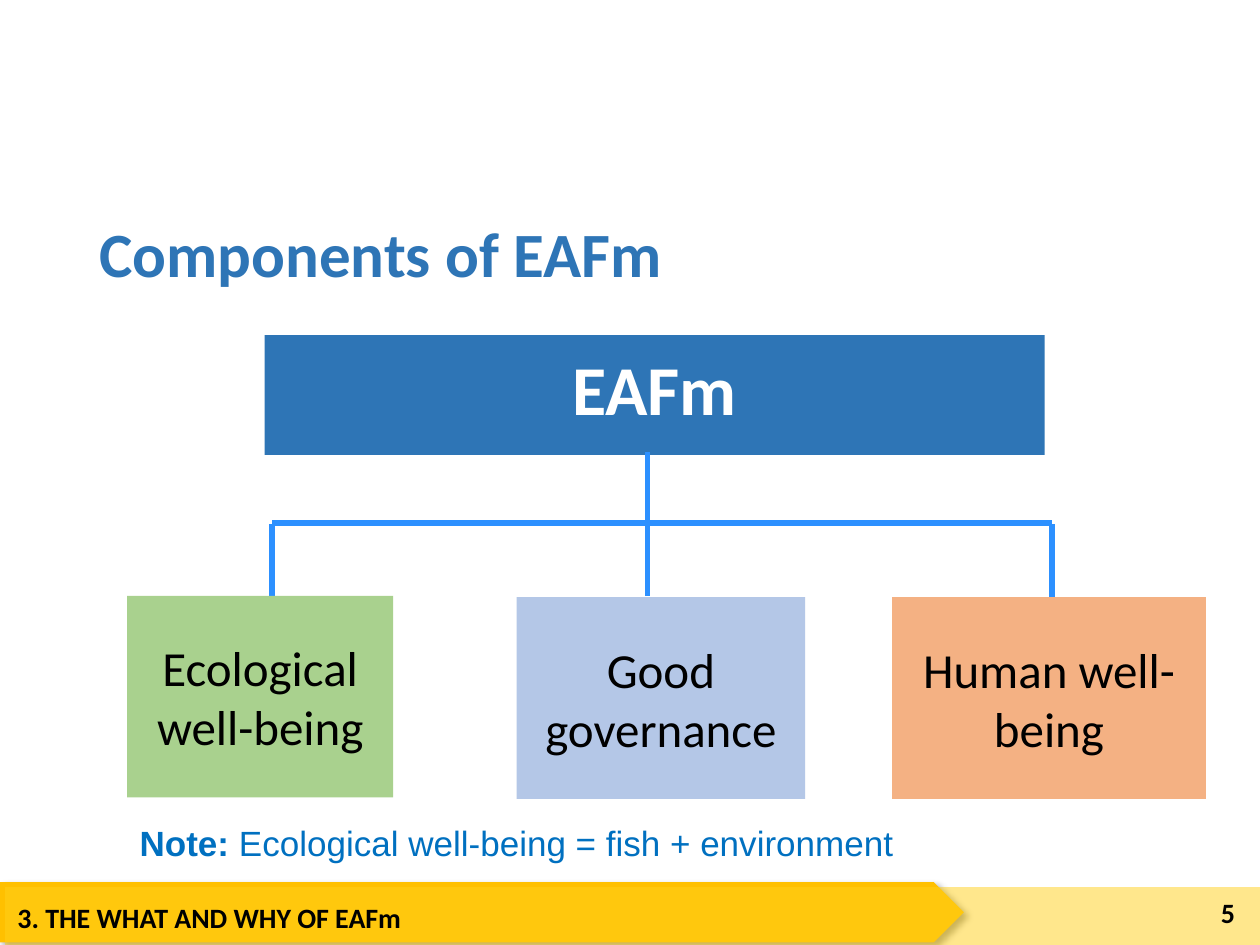
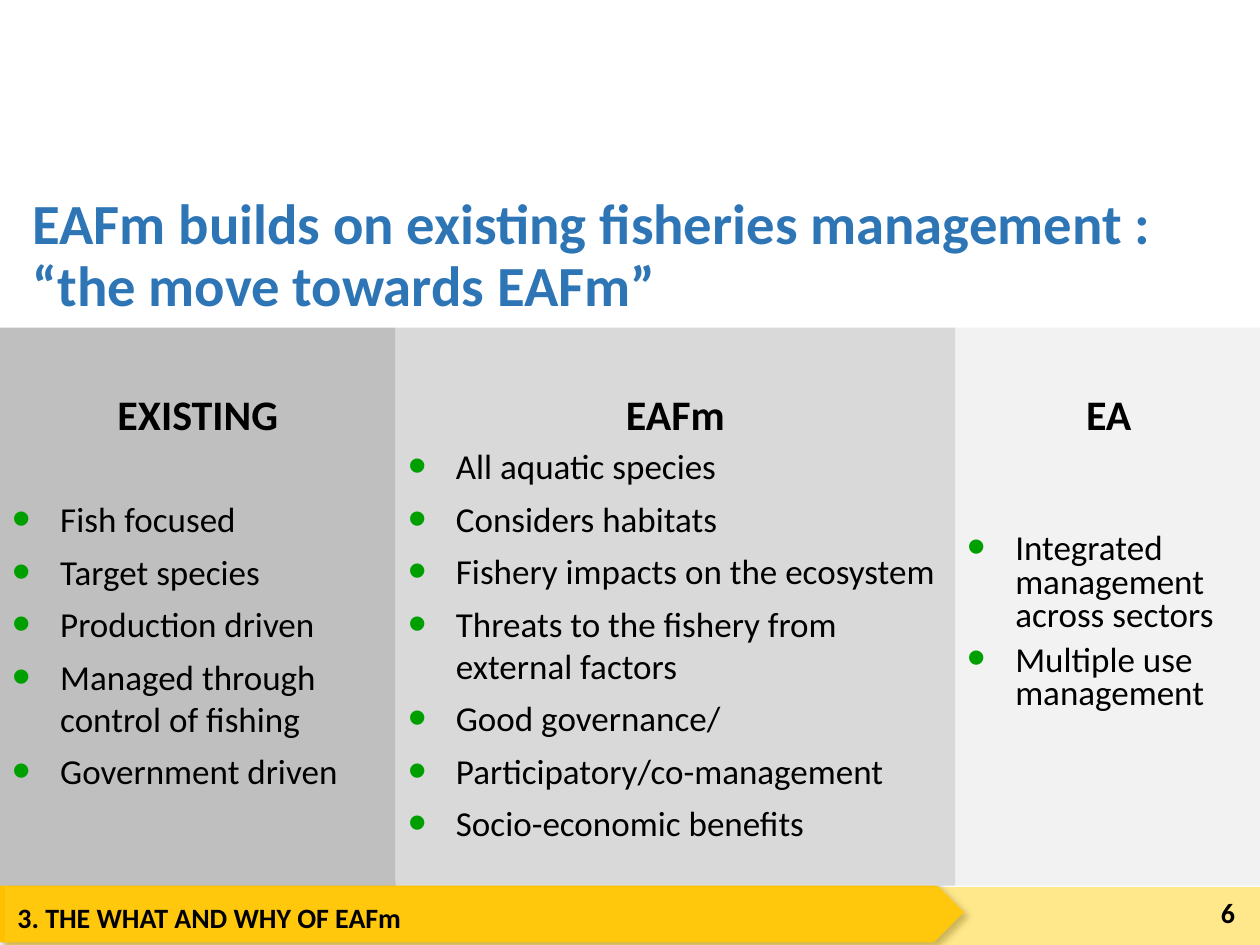
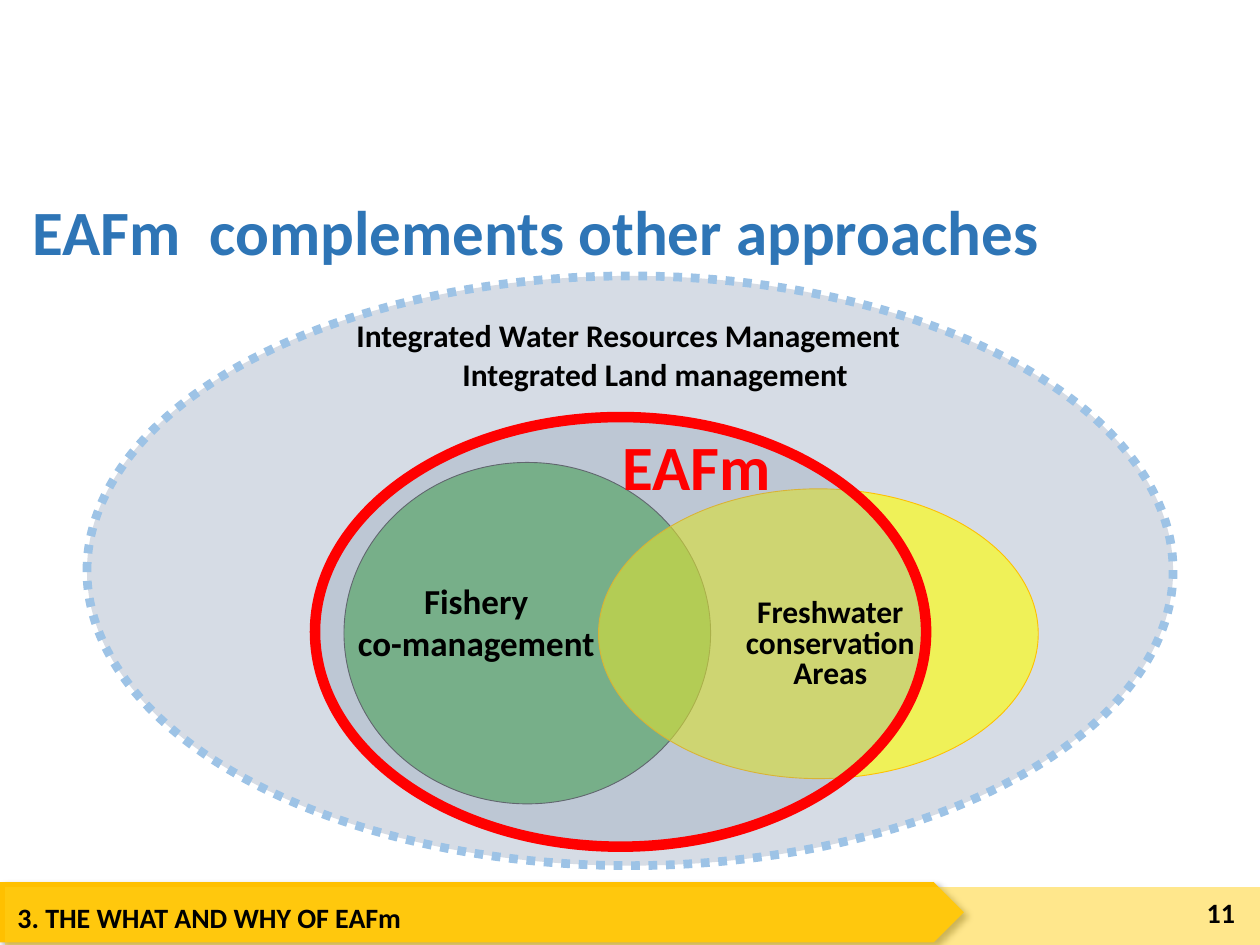
from dataclasses import dataclass
from typing import Optional

from lxml.etree import SubElement
from pptx import Presentation
from pptx.dml.color import RGBColor
from pptx.enum.dml import MSO_LINE_DASH_STYLE as Dash
from pptx.enum.shapes import MSO_CONNECTOR, MSO_SHAPE as Preset
from pptx.enum.text import MSO_ANCHOR as Anchor, MSO_AUTO_SIZE as AutoSize, PP_ALIGN as Align
from pptx.oxml.ns import qn
from pptx.util import Inches, Pt

COLORS = {
    "black": "000000", "white": "FFFFFF", "title": "2E75B6", "note": "0070C0",
    "band": "FFC000", "band veil": "FFD01B", "branch": "2C90FF",
    "ecology": "A9D18E", "governance": "B4C7E7", "human": "F4B183",
    "existing": "BFBFBF", "eafm": "D9D9D9", "ea": "F2F2F2", "bullet": "009F00",
    "basin": "D6DCE5", "basin edge": "9DC3E6", "fishery": "3AA73D",
    "fishery edge": "525252", "reserve": "FFFF00", "reserve edge": "FFC000",
    "scope": "8497B0", "red": "FF0000",
}
COLUMNS, ROWS = 100, 75
WIDTH, HEIGHT = Inches(10), Inches(7.5)
CHAPTER = "3. THE WHAT AND WHY OF EAFm"
INDENT = Inches(0.38)


def col(count: float) -> int:
    return round(WIDTH * count / COLUMNS)


def row(count: float) -> int:
    return round(HEIGHT * count / ROWS)


@dataclass(frozen=True)
class Box:
    left: float
    top: float
    width: float
    height: float

    def emu(self) -> tuple[int, int, int, int]:
        return col(self.left), row(self.top), col(self.width), row(self.height)


@dataclass(frozen=True)
class Component:
    label: str
    box: Box
    color: str


@dataclass(frozen=True)
class Stage:
    heading: str
    points: tuple[str, ...]
    left: float
    width: float
    color: str
    lead_in: float
    spacing: float = 1.0


@dataclass(frozen=True)
class Oval:
    box: Box
    color: str
    opacity: int
    edge: str
    edge_width: float
    dash: Optional[Dash] = None


@dataclass(frozen=True)
class Label:
    lines: tuple[str, ...]
    box: Box
    size: float
    color: str = "black"
    spacing: float = 1.0
    align: Align = Align.CENTER


COMPONENTS = (
    Component("Ecological well-being", Box(10.1, 47.3, 21.1, 16), "ecology"),
    Component("Good governance", Box(41, 47.4, 22.9, 16), "governance"),
    Component("Human well-being", Box(70.8, 47.4, 24.9, 16), "human"),
)
BRANCHES = (
    (51.4, 35.9, 51.4, 47.3, 3.25),
    (21.6, 41.6, 21.6, 47.4, 3.25),
    (83.5, 41.6, 83.5, 47.4, 3.25),
    (21.6, 41.5, 83.5, 41.5, 3),
)
STAGES = (
    Stage("EA", ("Integrated management across sectors", "Multiple use management"),
          75.8, 24.4, "ea", 54, 0.8),
    Stage("EXISTING", ("Fish focused", "Target species", "Production driven",
                       "Managed through control of fishing", "Government driven"),
          0, 31.4, "existing", 33.4),
    Stage("EAFm", ("All aquatic species", "Considers habitats",
                   "Fishery impacts on the ecosystem",
                   "Threats to the fishery from external factors",
                   "Good governance/", "Participatory/co-management",
                   "Socio-economic benefits"),
          31.4, 44.4, "eafm", 3),
)
OVALS = (
    Oval(Box(6.9, 21.9, 86.2, 46.8), "basin", 100, "basin edge", 5, Dash.ROUND_DOT),
    Oval(Box(27.3, 36.7, 29.1, 27.1), "fishery", 64, "fishery edge", 0.5),
    Oval(Box(47.5, 38.8, 34.9, 23), "reserve", 61, "reserve edge", 0.5),
    Oval(Box(25, 33.1, 48.5, 34.1), "scope", 30, "red", 6),
)
LABELS = (
    Label(("Fishery", "co-management"), Box(26.5, 45.5, 22.6, 9.4), 20),
    Label(("Freshwater conservation Areas",), Box(55.7, 47.1, 20.4, 7.7), 18, spacing=0.8),
    Label(("EAFm",), Box(45.9, 33.4, 18.8, 6.3), 36, "red"),
    Label(("Integrated Water Resources Management",), Box(27.3, 24.6, 49.1, 9.5), 18,
          align=Align.LEFT),
    Label(("Integrated Land management",), Box(31.7, 27.7, 40.6, 6.3), 18),
)


def rgb(name: str) -> RGBColor:
    return RGBColor.from_string(COLORS[name])


def add_bullet(paragraph) -> None:
    props = paragraph._p.get_or_add_pPr()
    props.set("marL", str(INDENT))
    props.set("indent", str(-INDENT))
    tint = SubElement(props, qn("a:buClr"))
    SubElement(tint, qn("a:srgbClr"), val=COLORS["bullet"])
    SubElement(props, qn("a:buSzPct"), val="150000")
    SubElement(props, qn("a:buFont"), typeface="Arial")
    SubElement(props, qn("a:buChar"), char="•")


def write(frame, text: str, *, size: float, color: str = "black", bold: bool = False,
          bold_lead: str = "", font: str = "Calibri", align: Align = Align.LEFT,
          spacing=1.0, before: float = 0, after: float = 0, bullet: bool = False) -> None:
    paragraph = frame.add_paragraph() if frame.text else frame.paragraphs[0]
    if bullet:
        add_bullet(paragraph)
    paragraph.alignment = align
    paragraph.line_spacing = spacing
    paragraph.space_before, paragraph.space_after = Pt(before), Pt(after)
    for content, is_bold in ((bold_lead, True), (text, bold)):
        if content:
            run = paragraph.add_run()
            run.text = content
            run.font.name, run.font.size, run.font.bold = font, Pt(size), is_bold
            run.font.color.rgb = rgb(color)


def draw_shape(slide, preset: Preset, box: Box, color: str, opacity: int = 100):
    shape = slide.shapes.add_shape(preset, *box.emu())
    shape.shadow.inherit = False
    shape.fill.solid()
    shape.fill.fore_color.rgb = rgb(color)
    shape.line.fill.background()
    if opacity < 100:
        tint = shape.element.spPr.find(f"{qn('a:solidFill')}/{qn('a:srgbClr')}")
        SubElement(tint, qn("a:alpha"), val=str(opacity * 1000))
    shape.text_frame.word_wrap = True
    return shape


def text_area(slide, box: Box, anchor: Anchor = Anchor.TOP, wrap: bool = True):
    frame = slide.shapes.add_textbox(*box.emu()).text_frame
    frame.word_wrap, frame.vertical_anchor = wrap, anchor
    return frame


def cast_shadow(shape) -> None:
    effects = shape.element.spPr.find(qn("a:effectLst"))
    shadow = SubElement(effects, qn("a:outerShdw"), blurRad=str(Pt(4)), dist=str(Pt(3)),
                        dir="2700000", algn="tl", rotWithShape="0")
    tint = SubElement(shadow, qn("a:srgbClr"), val=COLORS["black"])
    SubElement(tint, qn("a:alpha"), val="40000")


def draw_branch(slide, x1: float, y1: float, x2: float, y2: float, weight: float) -> None:
    branch = slide.shapes.add_connector(
        MSO_CONNECTOR.STRAIGHT, col(x1), row(y1), col(x2), row(y2))
    branch.line.color.rgb = rgb("branch")
    branch.line.width = Pt(weight)
    SubElement(branch.element.spPr, qn("a:effectLst"))


def start_slide(deck, title: str, box: Box, number: int, size: float = 36):
    slide = deck.slides.add_slide(deck.slide_layouts[5])
    heading = slide.shapes.title
    heading.left, heading.top, heading.width, heading.height = box.emu()
    frame = heading.text_frame
    frame.word_wrap, frame.auto_size = True, AutoSize.NONE
    frame.vertical_anchor = Anchor.MIDDLE
    write(frame, title, size=size, color="title", bold=True, spacing=0.9)

    cast_shadow(draw_shape(slide, Preset.PENTAGON, Box(0, 70, 76.5, 4.8), "band"))
    draw_shape(slide, Preset.RECTANGLE, Box(0.4, 70.4, 99.6, 4.9), "band veil", 50)
    write(text_area(slide, Box(0.4, 71, 73.5, 4.1)), CHAPTER, size=16, bold=True)
    write(text_area(slide, Box(91.7, 70.4, 7.3, 4), Anchor.MIDDLE), str(number),
          size=16, bold=True, align=Align.RIGHT)
    return slide


def build_components(deck) -> None:
    slide = start_slide(deck, "Components of EAFm", Box(6.9, 16.3, 86.2, 8.2), 5)
    root = draw_shape(slide, Preset.RECTANGLE, Box(21, 26.6, 61.9, 9.5), "title")
    write(root.text_frame, "EAFm", size=40, color="white", bold=True,
          align=Align.CENTER, spacing=0.8, after=6)
    for branch in BRANCHES:
        draw_branch(slide, *branch)
    for component in COMPONENTS:
        card = draw_shape(slide, Preset.RECTANGLE, component.box, component.color)
        write(card.text_frame, component.label, size=28, align=Align.CENTER)
    write(text_area(slide, Box(10.1, 64.7, 62.3, 4.4), wrap=False),
          "Ecological well-being = fish + environment", bold_lead="Note: ",
          size=20, color="note", font="Arial")


def build_stages(deck) -> None:
    slide = start_slide(
        deck, "EAFm builds on existing fisheries management : “the move towards EAFm”",
        Box(1.6, 16.3, 97.4, 8.2), 6, size=32.4)
    for stage in STAGES:
        panel = draw_shape(slide, Preset.RECTANGLE,
                           Box(stage.left, 26, stage.width, 44.3), stage.color)
        frame = panel.text_frame
        frame.vertical_anchor = Anchor.TOP
        frame.margin_top = row(4.7)
        write(frame, stage.heading, size=24, bold=True, align=Align.CENTER, spacing=Pt(30))
        for index, point in enumerate(stage.points):
            write(frame, point, size=20, bullet=True, spacing=stage.spacing,
                  before=3 if index else stage.lead_in, after=3)


def build_overlap(deck) -> None:
    slide = start_slide(deck, "EAFm  complements other approaches",
                        Box(1.6, 14.6, 86.2, 8.2), 11)
    for oval in OVALS:
        area = draw_shape(slide, Preset.OVAL, oval.box, oval.color, oval.opacity)
        area.line.color.rgb = rgb(oval.edge)
        area.line.width = Pt(oval.edge_width)
        if oval.dash:
            area.line.dash_style = oval.dash
    for label in LABELS:
        frame = text_area(slide, label.box)
        for line in label.lines:
            write(frame, line, size=label.size, color=label.color, bold=True,
                  align=label.align, spacing=label.spacing)


def main() -> None:
    deck = Presentation()
    deck.slide_width, deck.slide_height = WIDTH, HEIGHT
    build_components(deck)
    build_stages(deck)
    build_overlap(deck)
    deck.save("out.pptx")


if __name__ == "__main__":
    main()
